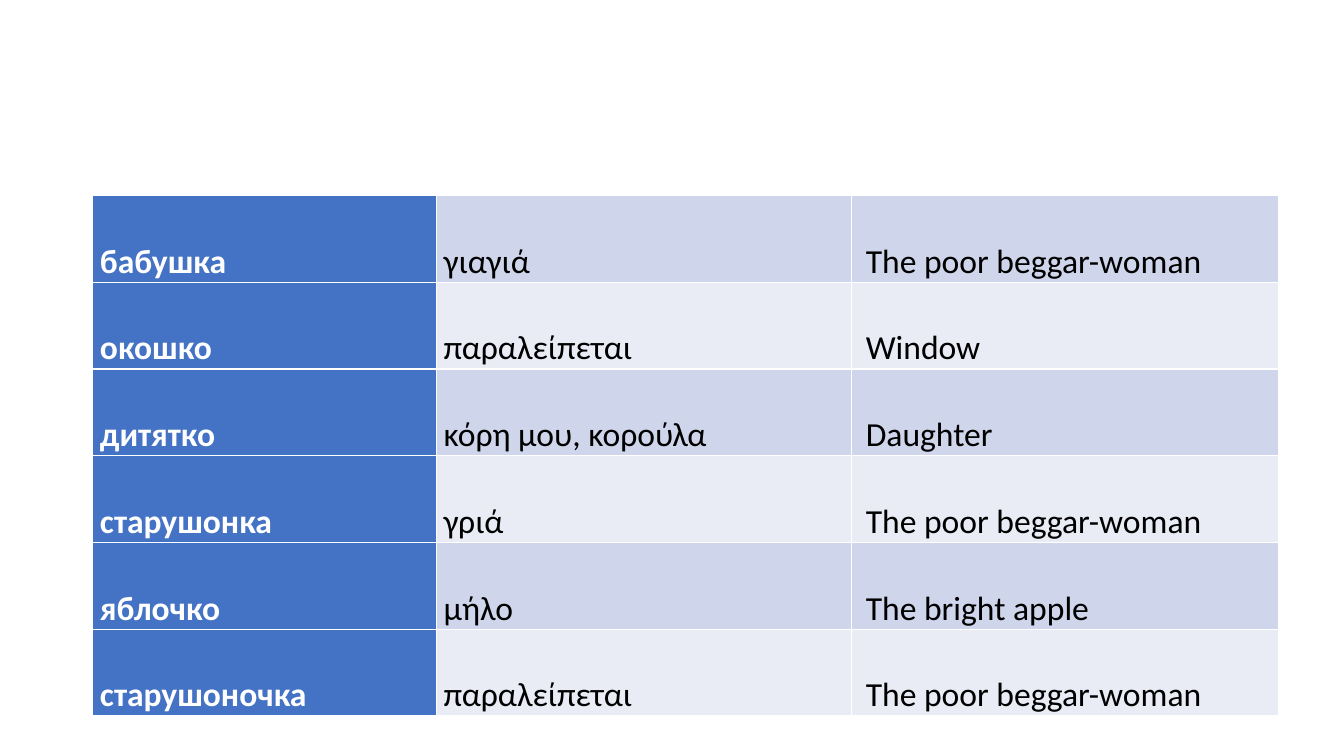
from lxml.etree import SubElement
from pptx import Presentation
from pptx.dml.color import RGBColor
from pptx.enum.text import MSO_ANCHOR
from pptx.oxml.ns import qn
from pptx.util import Cm, Pt

COLOURS = {
    "header": "4472C4",
    "odd_band": "CFD5EA",
    "even_band": "E9EBF5",
    "border": "FFFFFF",
    "header_text": "FFFFFF",
    "text": "000000",
}
COLUMN_WIDTHS = [Cm(8.66), Cm(10.45), Cm(10.78)]
LEFT_MARGINS = [Cm(0.18), Cm(0.18), Cm(0.37)]
TRANSLATIONS = [
    ("бабушка", "γιαγιά", "The poor beggar-woman"),
    ("окошко", "παραλείπεται", "Window"),
    ("дитятко", "κόρη μου, κορούλα", "Daughter"),
    ("старушонка", "γριά", "The poor beggar-woman"),
    ("яблочко", "μήλο", "The bright apple"),
    ("старушоночка", "παραλείπεται", "The poor beggar-woman"),
]


def add_borders(cell):
    properties = cell._tc.get_or_add_tcPr()
    for side in ("a:lnL", "a:lnR", "a:lnT", "a:lnB"):
        line = SubElement(properties, qn(side), w=str(Pt(1)))
        fill = SubElement(line, qn("a:solidFill"))
        SubElement(fill, qn("a:srgbClr"), val=COLOURS["border"])


def format_cell(cell, text, left_margin, fill, is_header):
    # Frame and fill
    add_borders(cell)
    cell.fill.solid()
    cell.fill.fore_color.rgb = RGBColor.from_string(COLOURS[fill])
    cell.vertical_anchor = MSO_ANCHOR.BOTTOM
    cell.margin_left, cell.margin_right = left_margin, Cm(0.18)
    cell.margin_top = cell.margin_bottom = 0

    # Text
    cell.text = text
    paragraph = cell.text_frame.paragraphs[0]
    paragraph.line_spacing = 1.15
    paragraph.space_after = Pt(10)
    font = paragraph.font
    font.name, font.size, font.bold = "Calibri", Pt(24), is_header
    text_colour = COLOURS["header_text" if is_header else "text"]
    font.color.rgb = RGBColor.from_string(text_colour)


def add_translation_table(slide, left, top, height):
    table = slide.shapes.add_table(
        len(TRANSLATIONS), len(COLUMN_WIDTHS), left, top, sum(COLUMN_WIDTHS), height
    ).table
    table.first_row = False
    table.first_col = True
    for column, width in zip(table.columns, COLUMN_WIDTHS):
        column.width = width

    for row_index, words in enumerate(TRANSLATIONS):
        band = "even_band" if row_index % 2 else "odd_band"
        for column_index, word in enumerate(words):
            is_header = column_index == 0
            format_cell(
                table.cell(row_index, column_index),
                word,
                LEFT_MARGINS[column_index],
                "header" if is_header else band,
                is_header,
            )


def main():
    presentation = Presentation()
    presentation.slide_width = Cm(33.87)
    presentation.slide_height = Cm(19.05)
    slide = presentation.slides.add_slide(presentation.slide_layouts[6])
    add_translation_table(slide, Cm(2.34), Cm(4.93), Cm(13.11))
    presentation.save("out.pptx")


if __name__ == "__main__":
    main()
